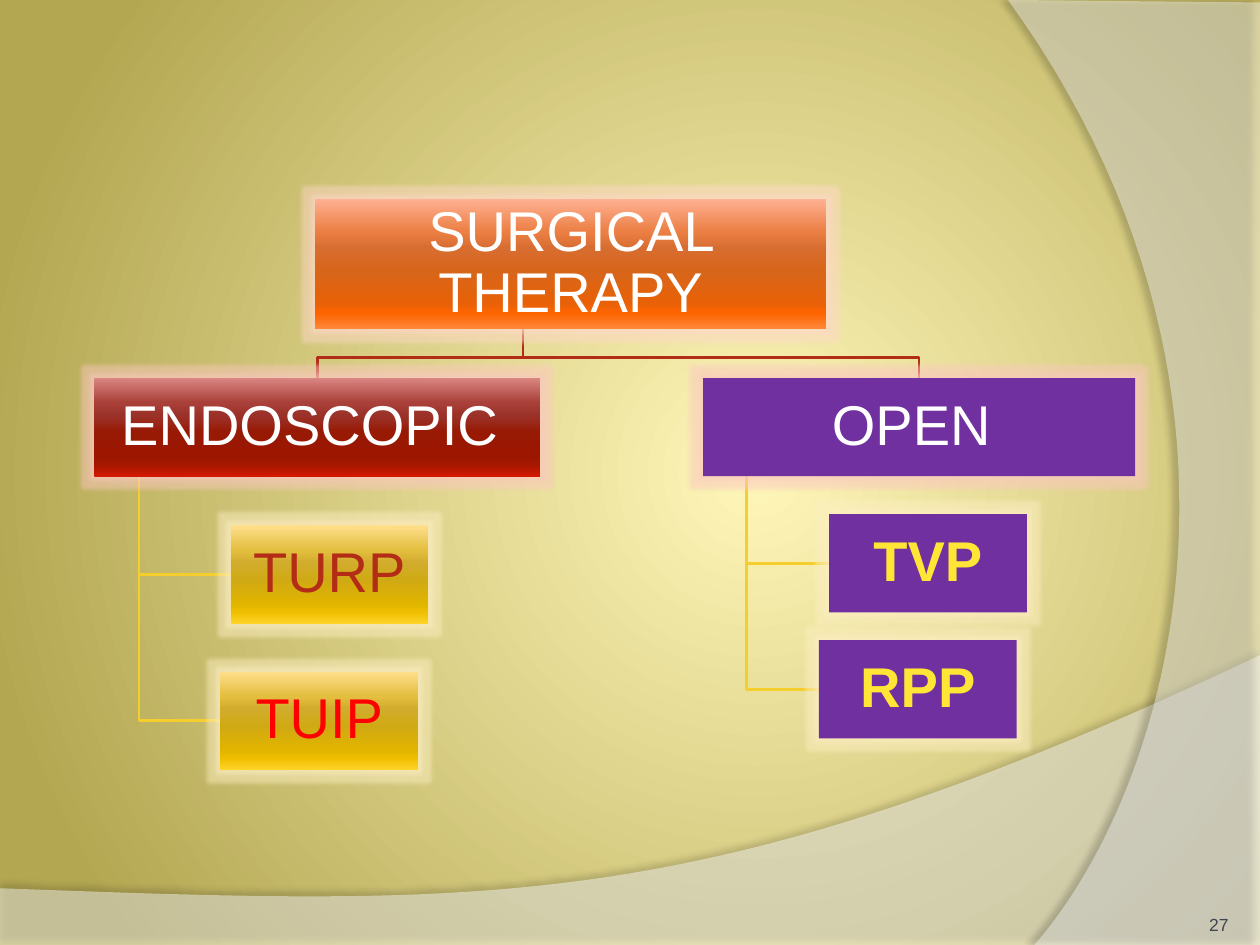
from lxml import etree
from pptx import Presentation
from pptx.dml.color import RGBColor
from pptx.enum.shapes import MSO_SHAPE
from pptx.enum.text import MSO_ANCHOR, PP_ALIGN
from pptx.oxml import parse_xml
from pptx.util import Inches, Pt

RECT = MSO_SHAPE.RECTANGLE
MIDDLE, BOTTOM = MSO_ANCHOR.MIDDLE, MSO_ANCHOR.BOTTOM
CENTER, RIGHT = PP_ALIGN.CENTER, PP_ALIGN.RIGHT
NS = "http://schemas.openxmlformats.org/drawingml/2006/main"
WIDTH, HEIGHT = 10, 7.5
BOX_HEIGHT, LEAF_WIDTH = 0.78, 1.57

# Colours
RED, YELLOW, PURPLE, WHITE = "B32C16", "F5CD2D", "7030A0", "FFFFFF"
STOPS = (0, 25, 38, 55, 80, 88, 100)
ORANGE_FILL = ("FFB194", "EB7F44", "D86D31", "D7661B", "E86108", "FD6400", "FF8739")
RED_FILL = ("DA8682", "A94039", "9B322A", "981A05", "9C1600", "A41700", "D31800")
GOLD_FILL = ("FFDF8C", "E3BE3F", "D1AC2D", "D0AA14", "E1B400", "EDBE00", "FFD327")
ORANGE_GLOW, PINK_GLOW, GOLD_GLOW = "FFD8C8", "FBC8C0", "FFF0C4"


def colour(value):
    return RGBColor.from_string(value)


def color_xml(value, alpha):
    return f'<a:srgbClr val="{value}"><a:alpha val="{alpha * 1000}"/></a:srgbClr>'


def gradient(stops, direction):
    marks = "".join(f'<a:gs pos="{place * 1000}"><a:srgbClr val="{value}"/></a:gs>'
                    for place, value in stops)
    return parse_xml(f'<a:gradFill xmlns:a="{NS}" rotWithShape="1">'
                     f"<a:gsLst>{marks}</a:gsLst>{direction}</a:gradFill>")


def replace_fill(parent, new_fill):
    parent.replace(parent.find(f"{{{NS}}}solidFill"), new_fill)


def add_effect(shape, name, attributes, value, alpha):
    shape.shadow.inherit = False
    effects = shape._element.spPr.find(f"{{{NS}}}effectLst")
    effect = etree.SubElement(effects, f"{{{NS}}}{name}", attributes)
    effect.append(parse_xml(color_xml(value, alpha).replace("<a:srgbClr", f'<a:srgbClr xmlns:a="{NS}"', 1)))


def outline(page, points, close):
    points = [(Inches(x), Inches(y)) for x, y in points]
    builder = page.shapes.build_freeform(*points[0])
    builder.add_line_segments(points[1:], close=close)
    return builder.convert_to_shape()


def curve(start, first, second, end, steps=48):
    """Points along a cubic curve, without its start."""
    for step in range(1, steps + 1):
        t = step / steps
        weights = ((1 - t) ** 3, 3 * t * (1 - t) ** 2, 3 * t * t * (1 - t), t ** 3)
        yield tuple(sum(w * p[axis] for w, p in zip(weights, (start, first, second, end)))
                    for axis in (0, 1))


def write(shape, text, align, anchor, inset, **font):
    frame = shape.text_frame
    frame.word_wrap = True
    frame.vertical_anchor = anchor
    for side in ("left", "top", "right", "bottom"):
        setattr(frame, f"margin_{side}", Inches(inset))
    para = frame.paragraphs[0]
    para.alignment = align
    span = para.add_run()
    span.text = text
    span.font.color.rgb = colour(font.pop("color"))
    for name, value in {"name": "Arial", **font}.items():
        setattr(span.font, name, value)
    return para


def draw_background(page):
    fill = page.background.fill
    fill.solid()
    focus = ('<a:path path="circle"><a:fillToRect l="60000" t="50000" '
             'r="40000" b="50000"/></a:path>')
    replace_fill(page._element.cSld.bg.bgPr,
                 gradient([(0, "FFF6B9"), (100, "B3A752")], focus))

    # Translucent sweeps along the bottom and the right
    bottom = [(0, 7.05), (0, 7.51), (WIDTH, 7.51), (WIDTH, 5.2),
              *curve((WIDTH, 5.2), (5.59, 7.29), (3.91, 7.19), (0, 7.05))]
    side = [(WIDTH, 0.02), (WIDTH, HEIGHT), (8.21, HEIGHT),
            *curve((8.21, HEIGHT), (9.35, 6.19), (10.18, 3), (8, 0))]
    for points, alpha, shade, distance, angle in ((bottom, 45, 35, 3.5, 270),
                                                  (side, 40, 45, 4, 180)):
        sweep = outline(page, points, True)
        sweep.line.fill.background()
        sweep.fill.solid()
        replace_fill(sweep._element.spPr, parse_xml(
            f'<a:solidFill xmlns:a="{NS}">{color_xml(WHITE, alpha)}</a:solidFill>'))
        add_effect(sweep, "outerShdw", {"blurRad": str(Pt(4)), "dist": str(Pt(distance)),
                                        "dir": str(angle * 60000)}, "000000", shade)


def draw_link(page, points, value):
    link = outline(page, points, False)
    link.shadow.inherit = False
    link.fill.background()
    link.line.color.rgb = colour(value)
    link.line.width = Pt(1.5)


def draw_box(page, area, text, fill, glow, color, bold=False):
    box = page.shapes.add_shape(RECT, *map(Inches, area))
    box.line.fill.background()
    box.fill.solid()
    if isinstance(fill, str):
        box.fill.fore_color.rgb = colour(fill)
    else:
        replace_fill(box._element.spPr,
                     gradient(zip(STOPS, fill), '<a:lin ang="5400000" scaled="0"/>'))
    add_effect(box, "glow", {"rad": str(Pt(5))}, glow, 50)
    para = write(box, text, CENTER, MIDDLE, 0.02, size=Pt(32), color=color, bold=bold)
    para.line_spacing = 0.9


def draw_branch(page, area, heading, fill, leaf_fill, leaves, bold):
    """A heading box with leaves hung from a spine at a tenth of its width."""
    left, top, width, height = area
    spine, base = left + width / 10, top + height
    for _, x, y, _ in leaves:
        middle = y + BOX_HEIGHT / 2
        draw_link(page, [(spine, base), (spine, middle), (x, middle)], YELLOW)
    draw_box(page, area, heading, fill, PINK_GLOW, WHITE)
    for text, x, y, color in leaves:
        draw_box(page, (x, y, LEAF_WIDTH, BOX_HEIGHT), text, leaf_fill, GOLD_GLOW, color, bold)


def draw_chart(page):
    # Trunk from the root to both headings
    endoscopic, surgery = (0.75, 3, 3.54, BOX_HEIGHT), (5.58, 3, 3.43, BOX_HEIGHT)
    for left, top, width, _ in (endoscopic, surgery):
        middle = left + width / 2
        draw_link(page, [(4.15, 2.55), (4.15, 2.84), (middle, 2.84), (middle, top)], RED)

    # The trailing space is part of both headings
    draw_branch(page, endoscopic, "ENDOSCOPIC ", RED_FILL, GOLD_FILL,
                [("TURP", 1.83, 4.17, RED), ("TUIP", 1.75, 5.33, "FF0000")], False)
    draw_branch(page, surgery, "OPEN ", PURPLE, PURPLE,
                [("TVP", 6.58, 4.08, "FFE636"), ("RPP", 6.5, 5.08, "FFE636")], True)
    draw_box(page, (2.5, 1.58, 4.06, 1.03), "SURGICAL THERAPY",
             ORANGE_FILL, ORANGE_GLOW, WHITE)


def draw_page_number(page, area):
    box = page.shapes.add_textbox(*map(Inches, area))
    write(box, "27", RIGHT, BOTTOM, 0, size=Pt(10), color="404651")


def main():
    deck = Presentation()
    deck.slide_width, deck.slide_height = Inches(WIDTH), Inches(HEIGHT)
    page = deck.slides.add_slide(deck.slide_layouts[6])
    draw_background(page)
    draw_chart(page)
    draw_page_number(page, (8.92, 7.02, 0.83, 0.4))
    deck.save("out.pptx")


if __name__ == "__main__":
    main()
